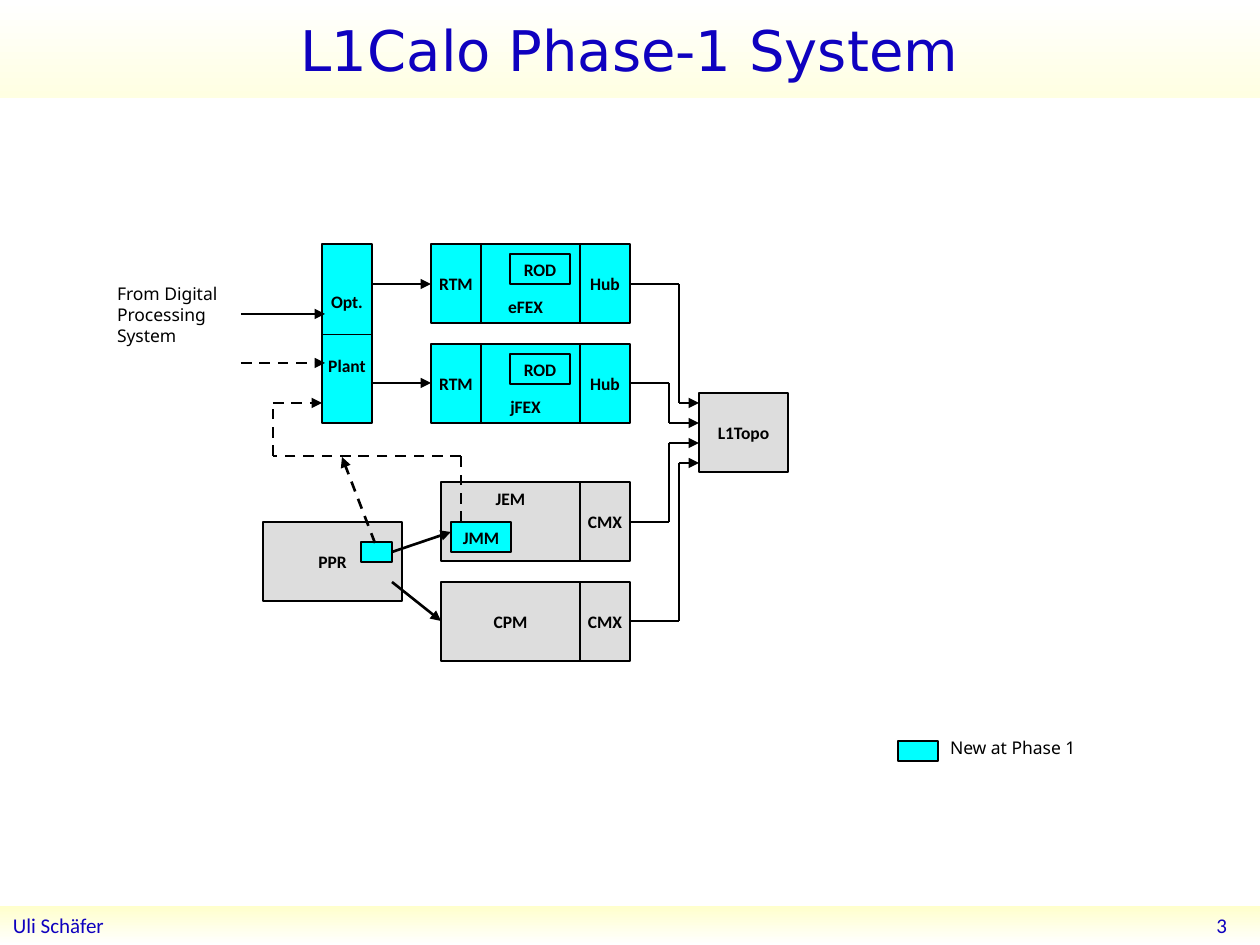
from itertools import pairwise

from lxml.etree import SubElement
from pptx import Presentation
from pptx.dml.color import RGBColor
from pptx.enum.dml import MSO_LINE
from pptx.enum.shapes import MSO_CONNECTOR, MSO_SHAPE
from pptx.enum.text import MSO_ANCHOR, PP_ALIGN
from pptx.oxml.ns import qn
from pptx.util import Pt

PX = 914400 / 126
COLORS = {"new": "00FFFF", "old": "DDDDDD", "ink": "000000", "blue": "0F01BF",
          "white": "FFFFFF", "title": "FFFFE2", "footer": "FFFFCC"}
TOP, MIDDLE, BOTTOM = MSO_ANCHOR.TOP, MSO_ANCHOR.MIDDLE, MSO_ANCHOR.BOTTOM
LEFT, CENTER, RIGHT = PP_ALIGN.LEFT, PP_ALIGN.CENTER, PP_ALIGN.RIGHT

deck = Presentation()
deck.slide_width, deck.slide_height = round(1260 * PX), round(945 * PX)
page = deck.slides.add_slide(deck.slide_layouts[6])


def write(shape, text, font, size, color="ink", align=CENTER, anchor=MIDDLE,
          bold=False, wrap=False, inset=0):
    frame = shape.text_frame
    frame.word_wrap = wrap
    frame.vertical_anchor = anchor
    frame.margin_left = frame.margin_right = round(inset * PX)
    frame.text = text
    for paragraph in frame.paragraphs:
        paragraph.alignment = align
        paragraph.font.name = font
        paragraph.font.size = Pt(size)
        paragraph.font.bold = bold
        paragraph.font.color.rgb = RGBColor.from_string(COLORS[color])


def route(points, width=1.5, dashed=False, arrow=True):
    """Join the points with straight lines, with an arrowhead on the last."""
    for start, end in pairwise(points):
        line = page.shapes.add_connector(
            MSO_CONNECTOR.STRAIGHT, *(round(v * PX) for v in (*start, *end)))
        line.line.color.rgb = RGBColor.from_string(COLORS["ink"])
        line.line.width = Pt(width)
        if dashed:
            line.line.dash_style = MSO_LINE.DASH
        if arrow and end == points[-1]:
            SubElement(line.line._ln, qn("a:tailEnd"), type="triangle")
        SubElement(line._element.spPr, qn("a:effectLst"))


# Title and footer bands
bands = [
    (0, 98, "title", 90, "L1Calo Phase-1 System", "DejaVu Sans", 32, CENTER),
    (906, 39, "footer", 270, "Uli Schäfer", "Calibri", 12, LEFT),
]
for top, height, tint, angle, text, font, size, align in bands:
    band = page.shapes.add_shape(MSO_SHAPE.RECTANGLE, 0, round(top * PX),
                                 deck.slide_width, round(height * PX))
    band.shadow.inherit = False
    band.line.fill.background()
    band.fill.gradient()
    band.fill.gradient_angle = angle
    for stop, color in zip(band.fill.gradient_stops, (tint, "white")):
        stop.color.rgb = RGBColor.from_string(COLORS[color])
    write(band, text, font, size, "blue", align, wrap=True, inset=13)

# Plain text
labels = [
    (974, 905, 266, 40, "3", "Calibri", 12, "blue", RIGHT, MIDDLE, True, 13),
    (117, 277, 119, 76, "From Digital Processing System", "Noto Sans", 10,
     "ink", LEFT, TOP, True, 0),
    (937, 731, 155, 34, "New at Phase 1", "Noto Sans", 10,
     "ink", LEFT, TOP, False, 13),
]
for left, top, width, height, text, font, size, color, align, anchor, wrap, inset in labels:
    label = page.shapes.add_textbox(*(round(v * PX) for v in (left, top, width, height)))
    write(label, text, font, size, color, align, anchor, wrap=wrap, inset=inset)

# Modules, back to front
ROW = 79
modules = [
    (263, 522, 139, ROW, "old", "PPR", MIDDLE),
    (361, 542, 31, 20, "new", "", MIDDLE),
    (322, 244, 50, 179, "new", "Opt.\nPlant", MIDDLE),
    (699, 393, 89, ROW, "old", "L1Topo", MIDDLE),
    (898, 741, 40, 20, "new", "", MIDDLE),
]
for top, name in ((244, "eFEX"), (344, "jFEX")):
    modules += [
        (471, top, 109, ROW, "new", name, BOTTOM),
        (431, top, 50, ROW, "new", "RTM", MIDDLE),
        (580, top, 50, ROW, "new", "Hub", MIDDLE),
        (510, top + 10, 60, 30, "new", "ROD", MIDDLE),
    ]
for top, name, anchor in ((482, "JEM", TOP), (582, "CPM", MIDDLE)):
    modules += [
        (441, top, 139, ROW, "old", name, anchor),
        (580, top, 50, ROW, "old", "CMX", MIDDLE),
    ]
modules.append((451, 522, 60, 30, "new", "JMM", MIDDLE))

for left, top, width, height, color, text, anchor in modules:
    box = page.shapes.add_shape(MSO_SHAPE.RECTANGLE,
                                *(round(v * PX) for v in (left, top, width, height)))
    box.shadow.inherit = False
    box.fill.solid()
    box.fill.fore_color.rgb = RGBColor.from_string(COLORS[color])
    box.line.color.rgb = RGBColor.from_string(COLORS["ink"])
    box.line.width = Pt(0.75)
    if text:
        write(box, text, "Calibri", 10, anchor=anchor, bold=True)
        for paragraph in box.text_frame.paragraphs[1:]:
            paragraph.space_before = Pt(24.4)

# Signals
route([(322, 334), (372, 334)], width=0.5, arrow=False)
route([(241, 314), (325, 314)])
route([(241, 363), (325, 363)], dashed=True)
for y in (284, 383):
    route([(372, y), (431, y)])
route([(392, 552), (451, 532)])
route([(392, 582), (441, 621)])
route([(461, 522), (461, 456), (273, 456), (273, 403), (322, 403)], dashed=True)
route([(375, 543), (342, 457)], dashed=True)
for y, bend, entry in ((284, 679, 403), (383, 669, 423), (522, 669, 443), (621, 679, 463)):
    route([(630, y), (bend, y), (bend, entry), (699, entry)])

deck.save("out.pptx")
